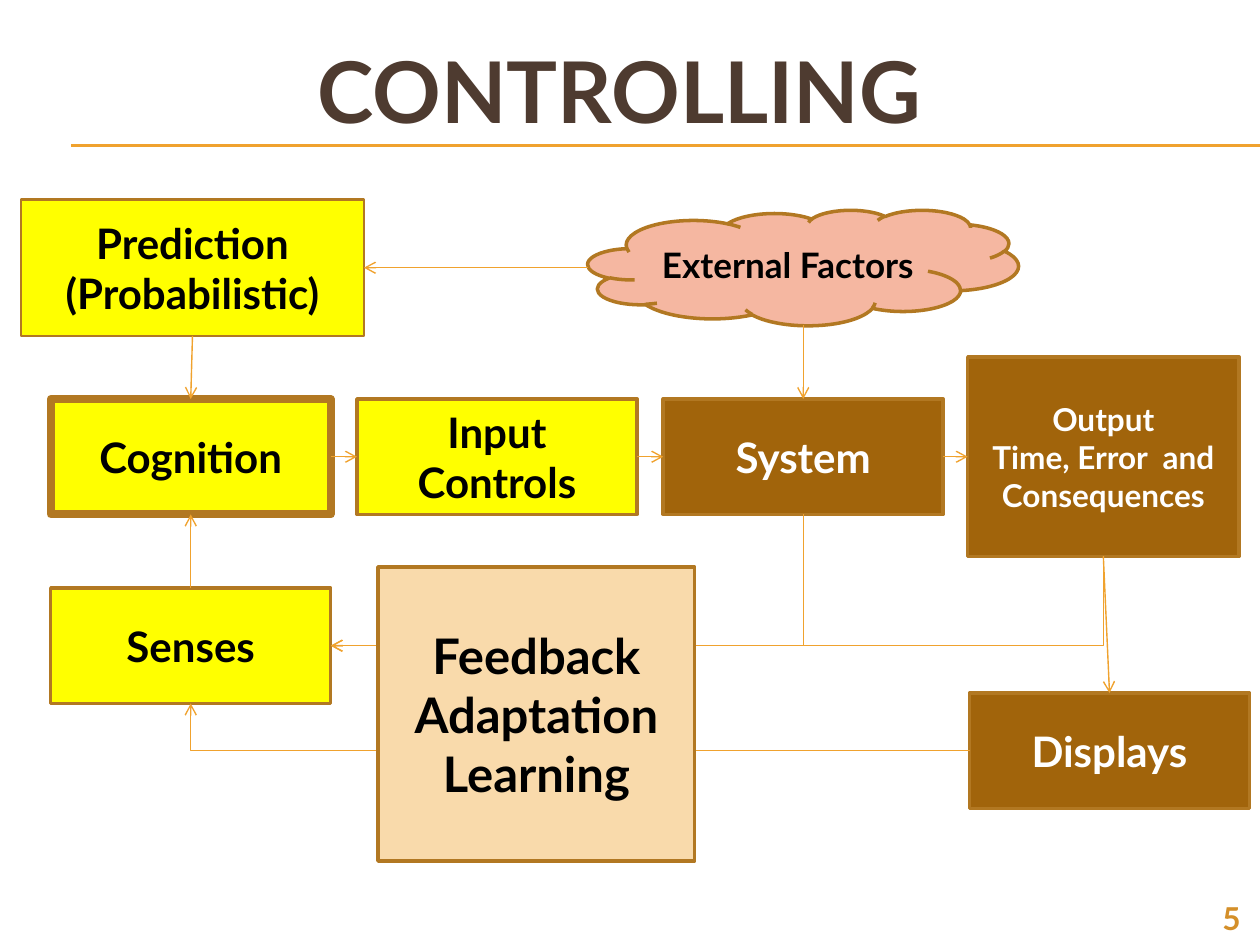
from dataclasses import dataclass

from lxml.etree import SubElement
from pptx import Presentation
from pptx.dml.color import RGBColor
from pptx.enum.shapes import MSO_CONNECTOR, MSO_SHAPE
from pptx.enum.text import MSO_ANCHOR, PP_ALIGN
from pptx.oxml.ns import qn
from pptx.util import Pt


@dataclass(frozen=True)
class Theme:
    """Colours, font and type sizes of the slide."""

    font: str = "Lato"
    title: str = "4E3B30"
    number: str = "D48F29"
    accent: str = "F0A22E"
    border: str = "B27822"
    human: str = "FFFF00"
    machine: str = "A1640B"
    external: str = "F5B7A1"
    feedback: str = "F9DAAB"
    dark: str = "000000"
    light: str = "FFFFFF"
    title_size: float = 48.6
    large: float = 28
    normal: float = 24
    medium: float = 20
    small: float = 18


class Diagram:
    """Draws titles, boxes and arrows on one slide in one style."""

    def __init__(self, page, theme):
        """Keep the slide and its theme."""
        self.page = page
        self.theme = theme

    def set_text(self, frame, lines, size, color, align=PP_ALIGN.CENTER):
        """Fill a text frame with one paragraph per line."""
        frame.word_wrap = True
        frame.text = "\n".join(lines)
        for para in frame.paragraphs:
            para.alignment = align
            para.font.name = self.theme.font
            para.font.size = Pt(size)
            para.font.bold = True
            para.font.color.rgb = RGBColor.from_string(color)

    def title(self, text, left, top, width, height):
        """Place and format the title placeholder."""
        box = self.page.shapes.title
        box.left, box.top, box.width, box.height = map(Pt, (left, top, width, height))
        box.text_frame.vertical_anchor = MSO_ANCHOR.MIDDLE
        self.set_text(box.text_frame, [text], self.theme.title_size, self.theme.title)

    def number(self, text, left, top, width, height):
        """Add the right-aligned page number."""
        box = self.page.shapes.add_textbox(*map(Pt, (left, top, width, height)))
        self.set_text(box.text_frame, [text], self.theme.small, self.theme.number,
                      PP_ALIGN.RIGHT)

    def box(self, lines, left, top, fill, width=160, height=66, size=None,
            border=2, preset=MSO_SHAPE.RECTANGLE):
        """Add a filled, bordered shape with centred text."""
        box = self.page.shapes.add_shape(preset, *map(Pt, (left, top, width, height)))
        box.shadow.inherit = False
        box.fill.solid()
        box.fill.fore_color.rgb = RGBColor.from_string(fill)
        box.line.color.rgb = RGBColor.from_string(self.theme.border)
        box.line.width = Pt(border)
        box.text_frame.vertical_anchor = MSO_ANCHOR.MIDDLE
        color = self.theme.light if fill == self.theme.machine else self.theme.dark
        self.set_text(box.text_frame, lines, size or self.theme.normal, color)
        return box

    def line(self, start, end, width=0.79, arrow=True, kind=MSO_CONNECTOR.STRAIGHT):
        """Add a connector between two points, with an arrowhead if wanted."""
        connector = self.page.shapes.add_connector(kind, *map(Pt, start + end))
        connector.line.color.rgb = RGBColor.from_string(self.theme.accent)
        connector.line.width = Pt(width)
        properties = connector.element.spPr
        if arrow:
            SubElement(properties.find(qn("a:ln")), qn("a:tailEnd"), type="arrow")
        SubElement(properties, qn("a:effectLst"))
        return connector

    def bend(self, start, end, down_first=False):
        """Add a one-corner arrow that runs left and up, or down and left."""
        connector = self.line(start, end, kind=MSO_CONNECTOR.ELBOW)
        across, along = abs(end[0] - start[0]), abs(end[1] - start[1])
        width, height = (along, across) if down_first else (across, along)
        properties = connector.element.spPr
        properties.find(qn("a:prstGeom")).set("prst", "bentConnector2")
        transform = properties.find(qn("a:xfrm"))
        for flip in ("flipH", "flipV"):
            transform.attrib.pop(flip, None)
        transform.set("rot", str((90 if down_first else 180) * 60000))
        connector.left = Pt((start[0] + end[0] - width) / 2)
        connector.top = Pt((start[1] + end[1] - height) / 2)
        connector.width, connector.height = Pt(width), Pt(height)


def side(box, name):
    """Return the middle of one side of a box, in points."""
    across, down = {"left": (0, 0.5), "right": (1, 0.5),
                    "top": (0.5, 0), "bottom": (0.5, 1)}[name]
    return (box.left.pt + across * box.width.pt, box.top.pt + down * box.height.pt)


def main():
    """Build the control loop slide."""
    deck = Presentation()
    deck.slide_width, deck.slide_height = Pt(720), Pt(540)
    theme = Theme()
    diagram = Diagram(deck.slides.add_slide(deck.slide_layouts[5]), theme)

    for height in (82.8, 83.5):
        diagram.line((40.5, height), (720, height), width=0.75, arrow=False)
    diagram.title("CONTROLLING", 84, 18, 540, 66)
    diagram.number("5", 644, 510, 72, 19.5)

    row = 228
    first, second, third = (29 + 175 * column for column in range(3))
    controls = diagram.box(["Input", "Controls"], second, row, theme.human)
    system = diagram.box(["System"], third, row, theme.machine)
    prediction = diagram.box(["Prediction", "(Probabilistic)"], 12, 114, theme.human,
                             width=196, height=78, border=1.5)
    cognition = diagram.box(["Cognition"], first, row, theme.human, border=4.5)
    senses = diagram.box(["Senses"], first, 336, theme.human)
    factors = diagram.box(["External Factors"], 336, 120, theme.external, width=246,
                          size=theme.medium, preset=MSO_SHAPE.CLOUD)
    displays = diagram.box(["Displays"], 554, 396, theme.machine)
    output = diagram.box(["Output", "Time, Error  and Consequences"], 553, 204,
                         theme.machine, width=155, height=114, size=theme.small)

    for source, target in ((cognition, controls), (controls, system), (system, output)):
        diagram.line(side(source, "right"), side(target, "left"))
    for source, target in ((prediction, cognition), (factors, system), (output, displays)):
        diagram.line(side(source, "bottom"), side(target, "top"))
    diagram.line(side(factors, "left"), side(prediction, "right"))
    diagram.line(side(senses, "top"), side(cognition, "bottom"))

    diagram.bend(side(displays, "left"), side(senses, "bottom"))
    for source in (output, system):
        diagram.bend(side(source, "bottom"), side(senses, "right"), down_first=True)
    diagram.box(["Feedback", "Adaptation", "Learning"], 216, 324, theme.feedback,
                width=181, height=168, size=theme.large)

    deck.save("out.pptx")


if __name__ == "__main__":
    main()
